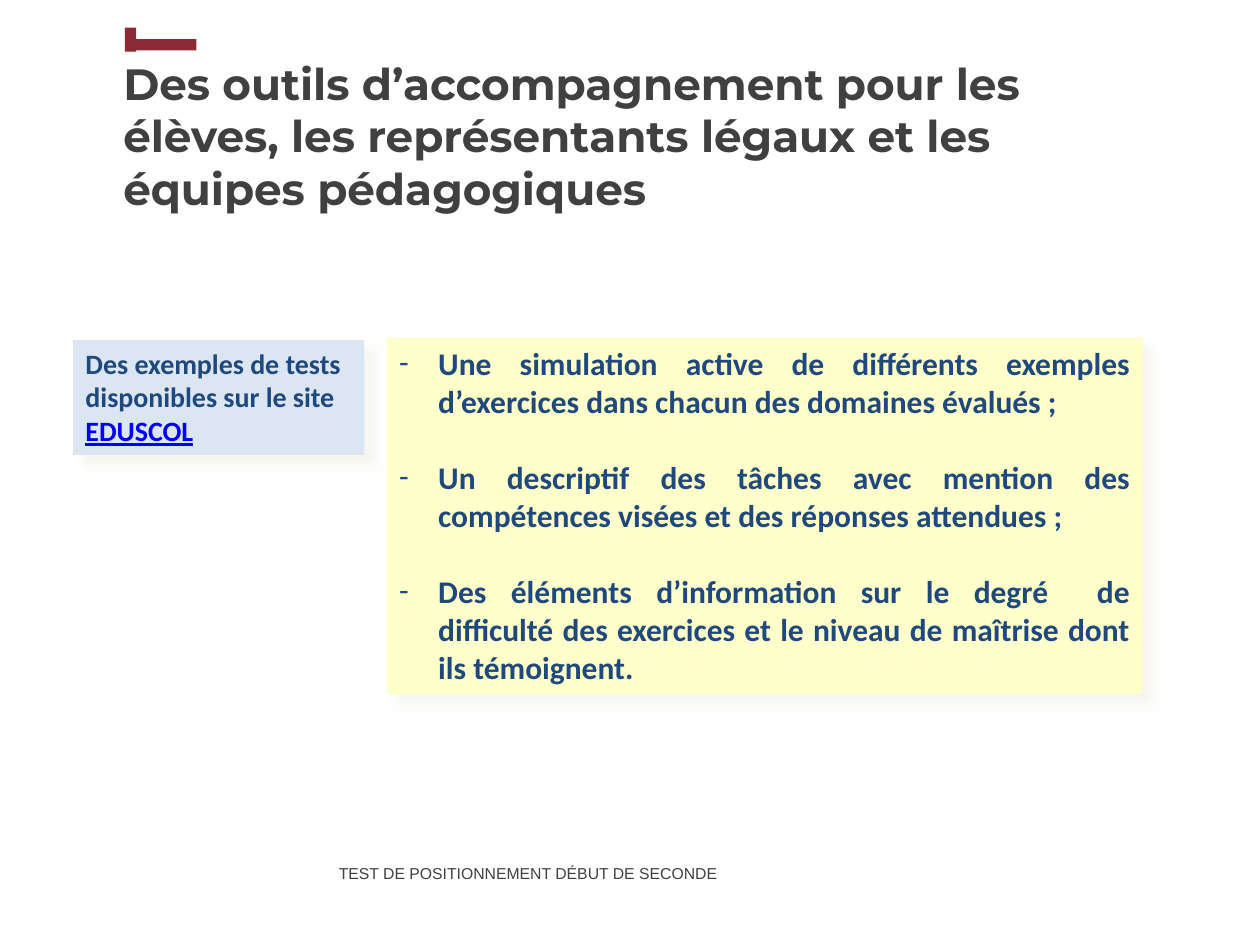
from lxml.etree import SubElement
from pptx import Presentation
from pptx.dml.color import RGBColor
from pptx.enum.shapes import MSO_SHAPE
from pptx.enum.text import MSO_ANCHOR, PP_ALIGN
from pptx.oxml.ns import qn
from pptx.util import Inches, Pt

RED, GREY, NAVY = "8B2934", "404040", "1F497D"
YELLOW, PALE_BLUE, LINK_BLUE, SHADOW = "FFFFCC", "DCE6F2", "0000FF", "EEECE1"

TITLE = ("Des outils d’accompagnement pour les élèves, les représentants "
         "légaux et les équipes pédagogiques")
TOOLS = [
    "Une simulation active de différents exemples d’exercices dans chacun "
    "des domaines évalués ;",
    "Un descriptif des tâches avec mention des compétences visées et des "
    "réponses attendues ;",
    "Des éléments d’information sur le degré  de difficulté des exercices "
    "et le niveau de maîtrise dont ils témoignent.",
]


def color(value):
    return RGBColor.from_string(value)


def style(font, name, size, font_color, bold=False):
    font.name, font.size, font.bold = name, Pt(size), bold
    font.color.rgb = color(font_color)


def add_rectangle(slide, left, top, width, height, fill):
    shape = slide.shapes.add_shape(
        MSO_SHAPE.RECTANGLE, Inches(left), Inches(top), Inches(width), Inches(height))
    shape.shadow.inherit = False
    shape.fill.solid()
    shape.fill.fore_color.rgb = color(fill)
    shape.line.fill.background()
    return shape


def add_text_box(slide, left, top, width, height):
    box = slide.shapes.add_textbox(
        Inches(left), Inches(top), Inches(width), Inches(height))
    box.text_frame.word_wrap = True
    return box.text_frame


def add_panel(slide, left, top, width, height, fill):
    """Add a filled box with a soft shadow to the lower right."""
    panel = add_rectangle(slide, left, top, width, height, fill)
    effects = panel._element.spPr.find(qn("a:effectLst"))
    shadow = SubElement(effects, qn("a:outerShdw"), blurRad=str(Pt(5)),
                        dist=str(Pt(8.5)), dir=str(45 * 60000))
    shadow_color = SubElement(shadow, qn("a:srgbClr"), val=SHADOW)
    SubElement(shadow_color, qn("a:alpha"), val="50000")
    frame = panel.text_frame
    frame.word_wrap = True
    frame.vertical_anchor = MSO_ANCHOR.TOP
    return frame


def add_dash(paragraph, indent):
    properties = paragraph._p.get_or_add_pPr()
    properties.set("marL", str(Inches(indent)))
    properties.set("indent", str(-Inches(indent)))
    SubElement(properties, qn("a:buFont"), typeface="Calibri")
    SubElement(properties, qn("a:buChar"), char="-")


def add_title(slide, left, top, width, height):
    paragraph = add_text_box(slide, left, top, width, height).paragraphs[0]
    paragraph.text = TITLE
    style(paragraph.font, "Montserrat", 25, GREY, bold=True)


def add_corner_mark(slide, left, top):
    add_rectangle(slide, left, top, 0.09, 0.19, RED)
    add_rectangle(slide, left + 0.04, top + 0.09, 0.53, 0.09, RED)


def add_tools_panel(slide, left, top, width, height):
    frame = add_panel(slide, left, top, width, height, YELLOW)
    for index, tool in enumerate(TOOLS):
        paragraph = frame.add_paragraph() if index else frame.paragraphs[0]
        paragraph.text = tool
        paragraph.alignment = PP_ALIGN.JUSTIFY
        if index:
            paragraph.space_before = Pt(22)
        add_dash(paragraph, 0.31)
        style(paragraph.font, "Calibri", 18, NAVY, bold=True)


def add_examples_panel(slide, left, top, width, height):
    paragraph = add_panel(slide, left, top, width, height, PALE_BLUE).paragraphs[0]
    paragraph.alignment = PP_ALIGN.LEFT
    for text, text_color in (("Des exemples de tests disponibles sur le site ", NAVY),
                             ("EDUSCOL", LINK_BLUE)):
        run = paragraph.add_run()
        run.text = text
        style(run.font, "Calibri", 16, text_color, bold=True)
        run.font.underline = text_color == LINK_BLUE


def add_footer(slide, left, top, width, height):
    frame = add_text_box(slide, left, top, width, height)
    frame.margin_top = Inches(0.1)
    paragraph = frame.paragraphs[0]
    paragraph.text = "TEST DE POSITIONNEMENT DÉBUT DE SECONDE"
    paragraph.line_spacing = Pt(13.2)
    style(paragraph.font, "Arial", 9, GREY)


def main():
    presentation = Presentation()
    presentation.slide_width, presentation.slide_height = Inches(10), Inches(7.5)
    slide = presentation.slides.add_slide(presentation.slide_layouts[6])
    add_footer(slide, 2.59, 6.72, 3.88, 0.74)
    add_title(slide, 0.88, 0.4, 8.62, 1.41)
    add_corner_mark(slide, 0.99, 0.22)
    add_tools_panel(slide, 3.07, 2.68, 6, 2.83)
    add_examples_panel(slide, 0.58, 2.7, 2.31, 0.91)
    presentation.save("out.pptx")


if __name__ == "__main__":
    main()
